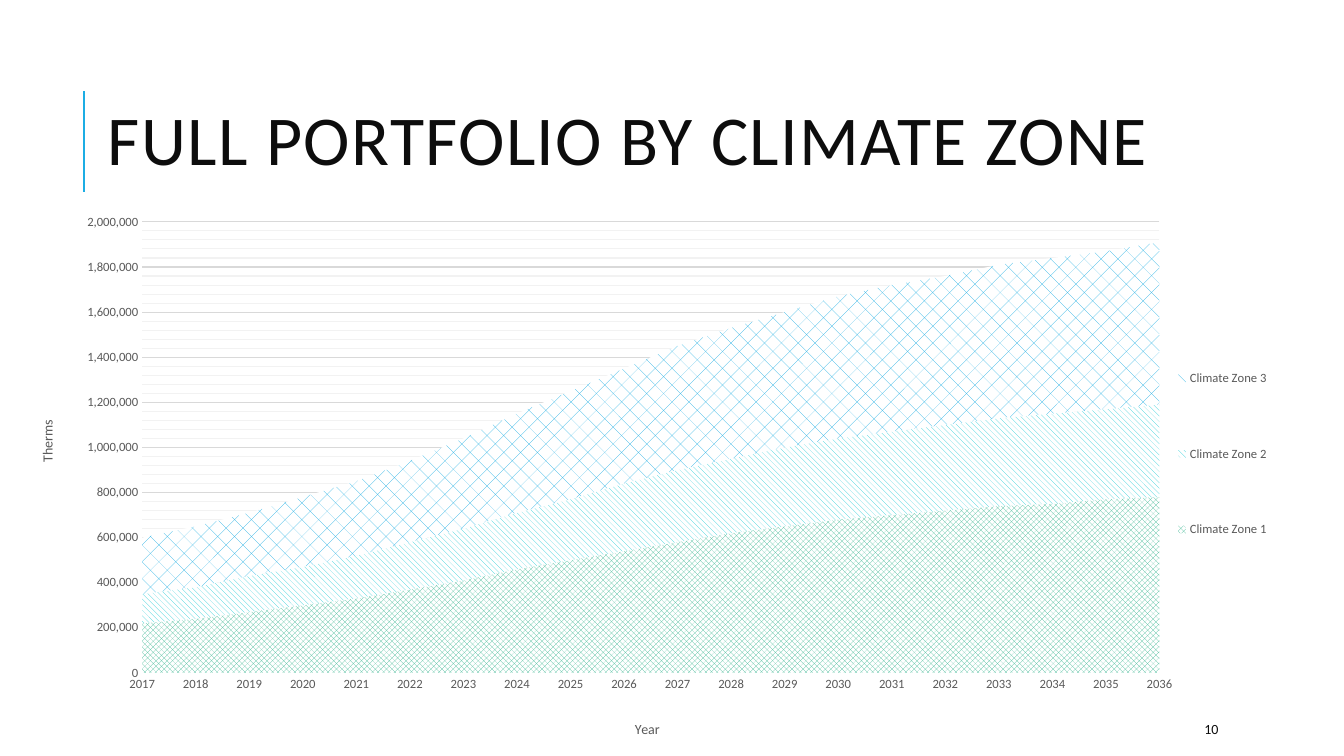
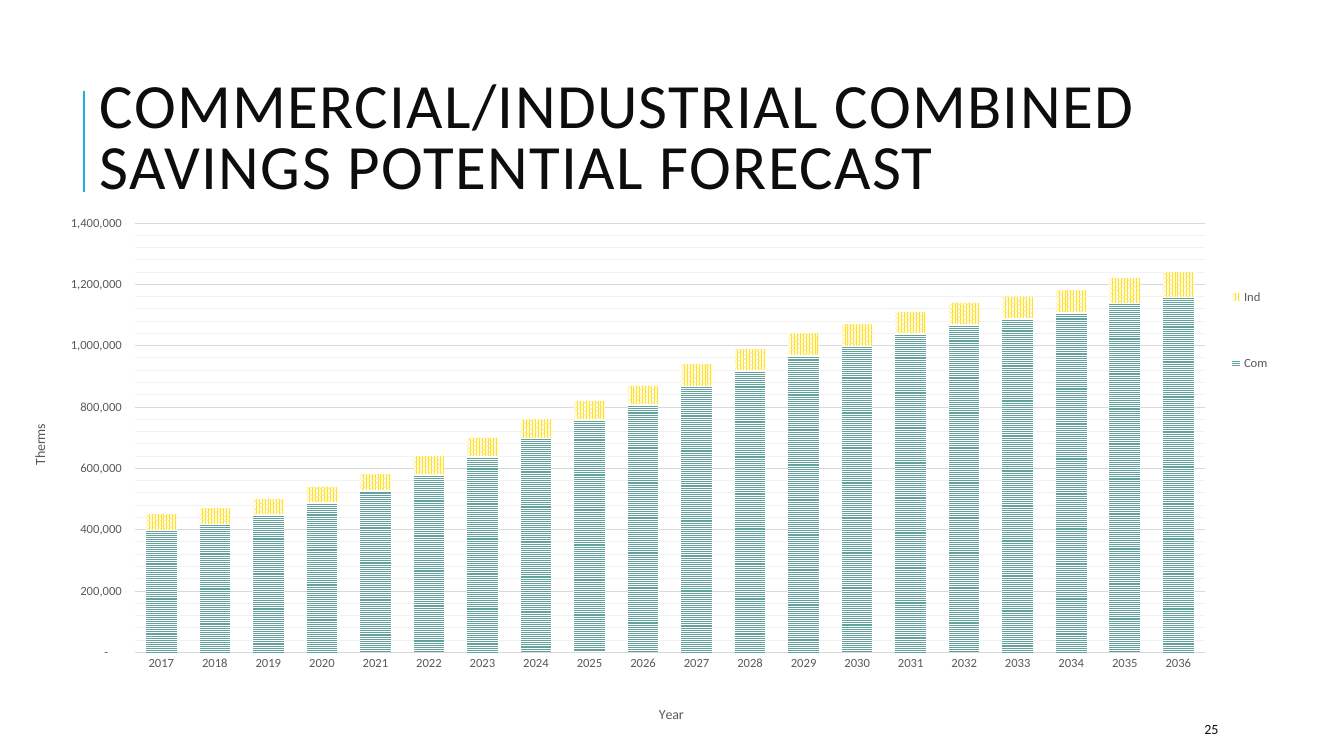
from dataclasses import dataclass

from pptx import Presentation
from pptx.chart.data import CategoryChartData
from pptx.dml.color import RGBColor
from pptx.enum.chart import XL_CHART_TYPE, XL_LEGEND_POSITION, XL_TICK_MARK
from pptx.enum.dml import MSO_PATTERN
from pptx.enum.shapes import MSO_CONNECTOR
from pptx.enum.text import MSO_ANCHOR, MSO_AUTO_SIZE, PP_ALIGN
from pptx.oxml import parse_xml
from pptx.oxml.ns import nsdecls, qn
from pptx.util import Cm, Pt


@dataclass(frozen=True)
class Theme:
    font: str = "Calibri"
    ink: str = "0D0D0D"
    accent: str = "1CADE4"
    chart_text: str = "595959"
    grid: str = "D9D9D9"
    minor_grid: str = "F2F2F2"
    paper: str = "FFFFFF"
    zone_1: str = "42BA97"
    zone_2: str = "27CED7"
    commercial: str = "62A39F"
    industrial: str = "FFE12F"
    small: float = 10
    label: float = 9


THEME = Theme()
YEARS = [str(year) for year in range(2017, 2037)]

# Savings in thousands of therms: name, yearly values, pattern, colour
ZONES = [
    ("Climate Zone 1",
     [220, 240, 270, 300, 330, 370, 410, 460, 500, 540,
      580, 620, 650, 680, 700, 720, 740, 750, 770, 780],
     MSO_PATTERN.SOLID_DIAMOND, THEME.zone_1),
    ("Climate Zone 2",
     [130, 140, 160, 170, 190, 210, 230, 250, 270, 300,
      320, 330, 350, 360, 370, 380, 390, 400, 400, 410],
     MSO_PATTERN.WIDE_DOWNWARD_DIAGONAL, THEME.zone_2),
    ("Climate Zone 3",
     [250, 270, 280, 310, 330, 360, 400, 440, 480, 510,
      550, 580, 600, 630, 650, 660, 680, 690, 700, 720],
     MSO_PATTERN.DIAGONAL_BRICK, THEME.accent),
]
SECTORS = [
    ("Com",
     [400, 420, 450, 490, 530, 580, 640, 700, 760, 810,
      870, 920, 970, 1000, 1040, 1070, 1090, 1110, 1140, 1160],
     MSO_PATTERN.NARROW_HORIZONTAL, THEME.commercial),
    ("Ind",
     [50] * 5 + [60] * 5 + [70] * 8 + [80] * 2,
     MSO_PATTERN.PERCENT_80, THEME.industrial),
]


def cm_box(box):
    return [Cm(length) for length in box]


def style_font(font, size, color):
    font.name = THEME.font
    font.size = Pt(size)
    font.bold = False
    font.color.rgb = RGBColor.from_string(color)


def style_line(line, color, width=0.75):
    line.color.rgb = RGBColor.from_string(color)
    line.width = Pt(width)


# Slide frame: title, accent rule and page number
def add_title(slide, wording, size, box):
    title = slide.shapes.title
    title.left, title.top, title.width, title.height = cm_box(box)
    frame = title.text_frame
    frame.text = wording
    frame.word_wrap = True
    frame.auto_size = MSO_AUTO_SIZE.NONE
    frame.vertical_anchor = MSO_ANCHOR.MIDDLE
    heading = frame.paragraphs[0]
    heading.alignment = PP_ALIGN.LEFT
    heading.line_spacing = 0.8
    run = heading.runs[0]
    style_font(run.font, size, THEME.ink)
    run.font._element.set("spc", "100")


def add_accent_rule(slide):
    rule = slide.shapes.add_connector(
        MSO_CONNECTOR.STRAIGHT, *cm_box((2.11, 4.83, 2.11, 2.29)))
    style_line(rule.line, THEME.accent, 1.5)
    rule._element.spPr.append(parse_xml(f"<a:effectLst {nsdecls('a')}/>"))


def add_page_number(slide, number):
    page = slide.shapes.add_textbox(*cm_box((30.1, 17.98, 2.69, 0.76)))
    frame = page.text_frame
    frame.word_wrap = True
    frame.vertical_anchor = MSO_ANCHOR.MIDDLE
    frame.text = str(number)
    style_font(frame.paragraphs[0].runs[0].font, THEME.small, THEME.ink)


def add_framed_slide(deck, wording, size, title_box, number):
    slide = deck.slides.add_slide(deck.slide_layouts[5])
    add_accent_rule(slide)
    add_title(slide, wording, size, title_box)
    add_page_number(slide, number)
    return slide


# Chart parts
def place(part, x, y, w=None, h=None, inner=False):
    """Fix a chart part at fractions of the chart's width and height."""
    for old in part.findall(qn("c:layout")):
        part.remove(old)
    settings = [("layoutTarget", "inner")] if inner else []
    settings += [("xMode", "edge"), ("yMode", "edge"), ("x", x), ("y", y)]
    if w is not None:
        settings += [("w", w), ("h", h)]
    rows = "".join(f'<c:{tag} val="{value}"/>' for tag, value in settings)
    layout = parse_xml(f"<c:layout {nsdecls('c')}><c:manualLayout>{rows}"
                       "</c:manualLayout></c:layout>")
    part.insert_element_before(layout, "c:areaChart", "c:barChart",
                               "c:overlay", "c:spPr", "c:txPr")


def add_axis_title(axis, wording, position, rotation=0):
    title = axis.axis_title
    title.text_frame.text = wording
    run = title.text_frame.paragraphs[0].runs[0]
    style_font(run.font, THEME.small, THEME.chart_text)
    body = title._element.xpath(".//a:bodyPr")[0]
    body.set("rot", str(rotation * 60000))
    body.set("vert", "horz")
    place(title._element, *position)


def add_minor_gridlines(axis):
    axis.has_minor_gridlines = True
    axis._element.find(qn("c:minorGridlines")).append(parse_xml(
        f'<c:spPr {nsdecls("c", "a")}><a:ln w="{Pt(0.75)}"><a:solidFill>'
        f'<a:srgbClr val="{THEME.minor_grid}"/></a:solidFill></a:ln></c:spPr>'))


def style_axes(chart, maximum, number_format, year_at, therms_at):
    years, therms = chart.category_axis, chart.value_axis
    for axis in (years, therms):
        style_font(axis.tick_labels.font, THEME.label, THEME.chart_text)
        axis.major_tick_mark = axis.minor_tick_mark = XL_TICK_MARK.NONE
    years.has_major_gridlines = False
    style_line(years.format.line, THEME.grid)
    therms.minimum_scale, therms.maximum_scale = 0, maximum
    therms.major_unit, therms.minor_unit = 200000, 40000
    therms.has_major_gridlines = True
    style_line(therms.major_gridlines.format.line, THEME.grid)
    add_minor_gridlines(therms)
    therms.format.line.fill.background()
    therms.tick_labels.number_format = number_format
    therms.tick_labels.number_format_is_linked = False
    add_axis_title(years, "Year", year_at)
    add_axis_title(therms, "Therms", therms_at, rotation=-90)


def add_legend(chart, box):
    chart.has_legend = True
    legend = chart.legend
    legend.position = XL_LEGEND_POSITION.RIGHT
    legend.include_in_layout = False
    style_font(legend.font, THEME.label, THEME.chart_text)
    place(legend._element, *box)


def add_forecast(slide, kind, box, groups, plot_box, legend_box, **axes):
    data = CategoryChartData(number_format="#,##0")
    data.categories = YEARS
    for name, thousands, _, _ in groups:
        data.add_series(name, [value * 1000 for value in thousands])
    chart = slide.shapes.add_chart(kind, *cm_box(box), data).chart
    chart.has_title = False
    style_font(chart.font, THEME.small, "000000")
    for series, (_, _, pattern, color) in zip(chart.plots[0].series, groups):
        fill = series.format.fill
        fill.patterned()
        fill.pattern = pattern
        fill.fore_color.rgb = RGBColor.from_string(color)
        fill.back_color.rgb = RGBColor.from_string(THEME.paper)
        series.format.line.fill.background()
    chart.plots[0].vary_by_categories = False
    style_axes(chart, **axes)
    add_legend(chart, legend_box)
    plot_area = chart._chartSpace.xpath("c:chart/c:plotArea")[0]
    place(plot_area, *plot_box, inner=True)
    return chart


# Slides
def add_zone_slide(deck):
    slide = add_framed_slide(deck, "FULL PORTFOLIO BY CLIMATE ZONE", 50,
                             (2.46, 1.57, 27, 4.17), 10)
    chart = add_forecast(
        slide, XL_CHART_TYPE.AREA_STACKED, (0.48, 5.13, 32.33, 13.61), ZONES,
        plot_box=(0.096, 0.034, 0.793, 0.835),
        legend_box=(0.897, 0.197, 0.082, 0.533),
        maximum=2000000, number_format="#,##0",
        year_at=(0.478, 0.951), therms_at=(0.013, 0.397))
    # Start the areas on the value axis
    for crossing in chart.value_axis._element.findall(qn("c:crossBetween")):
        crossing.set("val", "midCat")


def add_sector_slide(deck):
    slide = add_framed_slide(
        deck, "COMMERCIAL/INDUSTRIAL COMBINED SAVINGS POTENTIAL FORECAST", 45,
        (2.26, 1.93, 29.36, 3.25), 25)
    chart = add_forecast(
        slide, XL_CHART_TYPE.COLUMN_STACKED, (0, 5.18, 32.31, 13.13), SECTORS,
        plot_box=(0.105, 0.034, 0.835, 0.832),
        legend_box=(0.955, 0.064, 0.04, 0.355),
        maximum=1400000,
        number_format=r'_(* #,##0_);_(* \(#,##0\);_(* "-"??_);_(@_)',
        year_at=(0.512, 0.963), therms_at=(0.022, 0.419))
    chart.plots[0].gap_width = 75
    chart.plots[0].overlap = 100
    chart.value_axis.major_tick_mark = XL_TICK_MARK.OUTSIDE


def main():
    deck = Presentation()
    deck.slide_width, deck.slide_height = Cm(33.87), Cm(19.05)
    add_zone_slide(deck)
    add_sector_slide(deck)
    deck.save("out.pptx")


if __name__ == "__main__":
    main()
